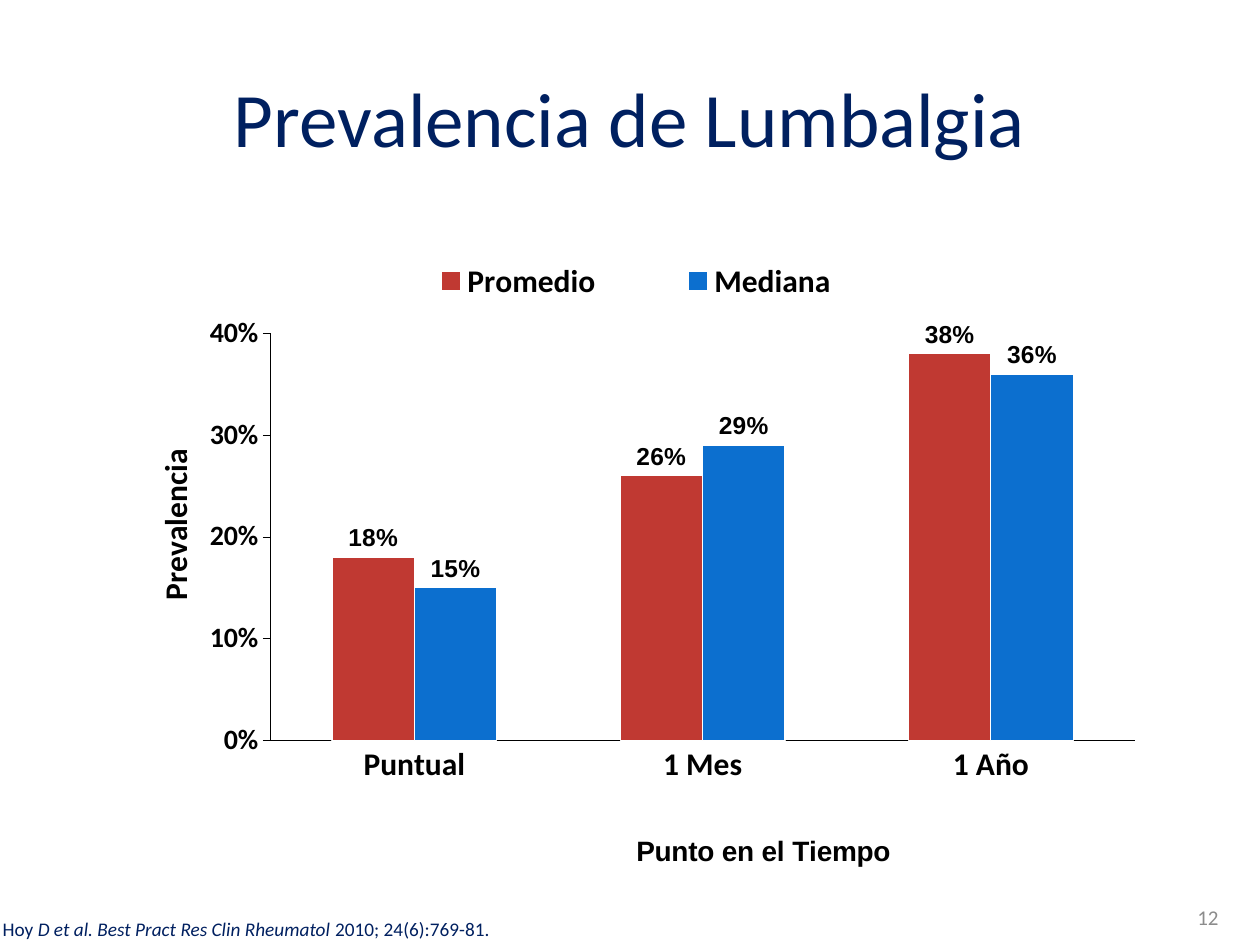
from lxml import etree
from pptx import Presentation
from pptx.chart.data import CategoryChartData
from pptx.dml.color import RGBColor
from pptx.enum.chart import XL_CHART_TYPE, XL_LABEL_POSITION, XL_LEGEND_POSITION, XL_TICK_MARK
from pptx.enum.text import MSO_ANCHOR, PP_ALIGN
from pptx.oxml.ns import qn
from pptx.util import Pt

EMU_PER_PX = 9144
BLANK_LAYOUT = 6
NAVY = RGBColor(0x00, 0x20, 0x60)
GRAY = RGBColor(0x8C, 0x8C, 0x8C)
BLACK = RGBColor(0x00, 0x00, 0x00)
WHITE = RGBColor(0xFF, 0xFF, 0xFF)
RED = RGBColor(0xC0, 0x39, 0x32)
BLUE = RGBColor(0x0C, 0x6F, 0xCF)

COLUMNS = XL_CHART_TYPE.COLUMN_CLUSTERED
LEGEND_BOTTOM = XL_LEGEND_POSITION.BOTTOM
LABEL_OUTSIDE = XL_LABEL_POSITION.OUTSIDE_END
TICK_NONE, TICK_OUT = XL_TICK_MARK.NONE, XL_TICK_MARK.OUTSIDE
MIDDLE, BOTTOM = MSO_ANCHOR.MIDDLE, MSO_ANCHOR.BOTTOM
LEFT, CENTER, RIGHT = PP_ALIGN.LEFT, PP_ALIGN.CENTER, PP_ALIGN.RIGHT

PERIODS = ["Puntual", "1 Mes", "1 Año"]
PREVALENCE = [
    ("Promedio", [0.18, 0.26, 0.38], RED),
    ("Mediana", [0.15, 0.29, 0.36], BLUE),
]


def px(*lengths):
    return [length * EMU_PER_PX for length in lengths]


class SlideBuilder:
    body_font = "Calibri"
    label_font = "Arial"

    def __init__(self, slide):
        self.slide = slide

    def style(self, font, size, color, name=body_font, bold=False):
        font.name, font.size, font.bold = name, Pt(size), bold
        font.color.rgb = color

    def text(self, box, runs, size, color, align=LEFT, anchor=MIDDLE, inset=None, after=0):
        frame = self.slide.shapes.add_textbox(*px(*box)).text_frame
        frame.word_wrap = True
        frame.vertical_anchor = anchor
        if inset is not None:
            frame.margin_left = frame.margin_right = inset
            frame.margin_top = frame.margin_bottom = inset
        paragraph = frame.paragraphs[0]
        paragraph.alignment = align
        paragraph.space_after = Pt(after)
        self.style(paragraph.font, size, color)
        for wording, italic in runs:
            run = paragraph.add_run()
            run.text = wording
            if italic:
                run.font.italic = True

    def place(self, element, target=None, **fractions):
        for previous in element.findall(qn("c:layout")):
            element.remove(previous)
        layout = etree.Element(qn("c:layout"))
        manual = etree.SubElement(layout, qn("c:manualLayout"))
        settings = {"layoutTarget": target} if target else {}
        settings.update(xMode="edge", yMode="edge", **fractions)
        for tag, value in settings.items():
            etree.SubElement(manual, qn(f"c:{tag}")).set("val", str(value))
        leading = (qn("c:tx"), qn("c:legendPos"))
        element.insert(sum(child.tag in leading for child in element), layout)

    def axis(self, axis, size, tick, title, title_size, title_font, x, y):
        axis.has_major_gridlines = False
        axis.major_tick_mark, axis.minor_tick_mark = tick, TICK_NONE
        axis.format.line.color.rgb = BLACK
        axis.format.line.width = Pt(0.25)
        self.style(axis.tick_labels.font, size, BLACK, bold=True)
        frame = axis.axis_title.text_frame
        frame.text = title
        self.style(frame.paragraphs[0].font, title_size, BLACK, title_font, True)
        self.place(axis.axis_title._element, x=x, y=y)
        return frame

    def column_chart(self, box, categories, series_rows, category_title, value_title):
        data = CategoryChartData(number_format="0%")
        data.categories = categories
        for name, values, _ in series_rows:
            data.add_series(name, values)
        chart = self.slide.shapes.add_chart(COLUMNS, *px(*box), data).chart
        self.style(chart.font, 16, BLACK, self.label_font)
        chart.has_title = False

        self.axis(chart.category_axis, 18, TICK_NONE, category_title, 16,
                  self.label_font, 0.5, 0.9)
        values_axis = chart.value_axis
        values_axis.minimum_scale, values_axis.maximum_scale = 0, 0.4
        values_axis.major_unit = 0.1
        values_axis.tick_labels.number_format = "0%"
        values_axis.tick_labels.number_format_is_linked = False
        value_frame = self.axis(values_axis, 16, TICK_OUT, value_title, 18,
                                self.body_font, 0.02, 0.33)
        value_frame._txBody.bodyPr.set("rot", "-5400000")
        value_frame._txBody.bodyPr.set("vert", "horz")

        chart.has_legend = True
        legend = chart.legend
        legend.position = LEGEND_BOTTOM
        legend.include_in_layout = False
        self.style(legend.font, 18, BLACK, bold=True)
        self.place(legend._element, x=0.23, y=0.05, w=0.55, h=0.08)
        self.place(chart._chartSpace.chart.plotArea, "inner",
                   x=0.142, y=0.167, w=0.858, h=0.603)

        plot = chart.plots[0]
        plot.gap_width, plot.overlap = 150, 0
        plot.vary_by_categories = False
        for series, (_, _, color) in zip(plot.series, series_rows):
            series.format.fill.solid()
            series.format.fill.fore_color.rgb = color
            series.format.line.color.rgb = WHITE
            series.format.line.width = Pt(0.75)
            labels = series.data_labels
            labels.show_value = True
            labels.number_format = "0%"
            labels.number_format_is_linked = False
            labels.position = LABEL_OUTSIDE
            self.style(labels.font, 14, BLACK, self.label_font, True)


def main():
    deck = Presentation()
    deck.slide_width, deck.slide_height = px(1000, 750)
    builder = SlideBuilder(deck.slides.add_slide(deck.slide_layouts[BLANK_LAYOUT]))
    citation = [
        ("Hoy ", False),
        ("D et al. Best Pract Res Clin Rheumatol ", True),
        ("2010; 24(6):769-81.", False),
    ]
    builder.text((2, 727, 948, 19), citation, 11, NAVY, anchor=BOTTOM, inset=0, after=6)
    builder.text((50, 30, 900, 125), [("Prevalencia de Lumbalgia", False)], 44, NAVY, CENTER)
    builder.text((744, 708, 233, 40), [("12", False)], 12, GRAY, RIGHT)
    builder.column_chart((101, 175, 800, 536), PERIODS, PREVALENCE,
                         "Punto en el Tiempo", "Prevalencia")
    deck.save("out.pptx")


if __name__ == "__main__":
    main()
